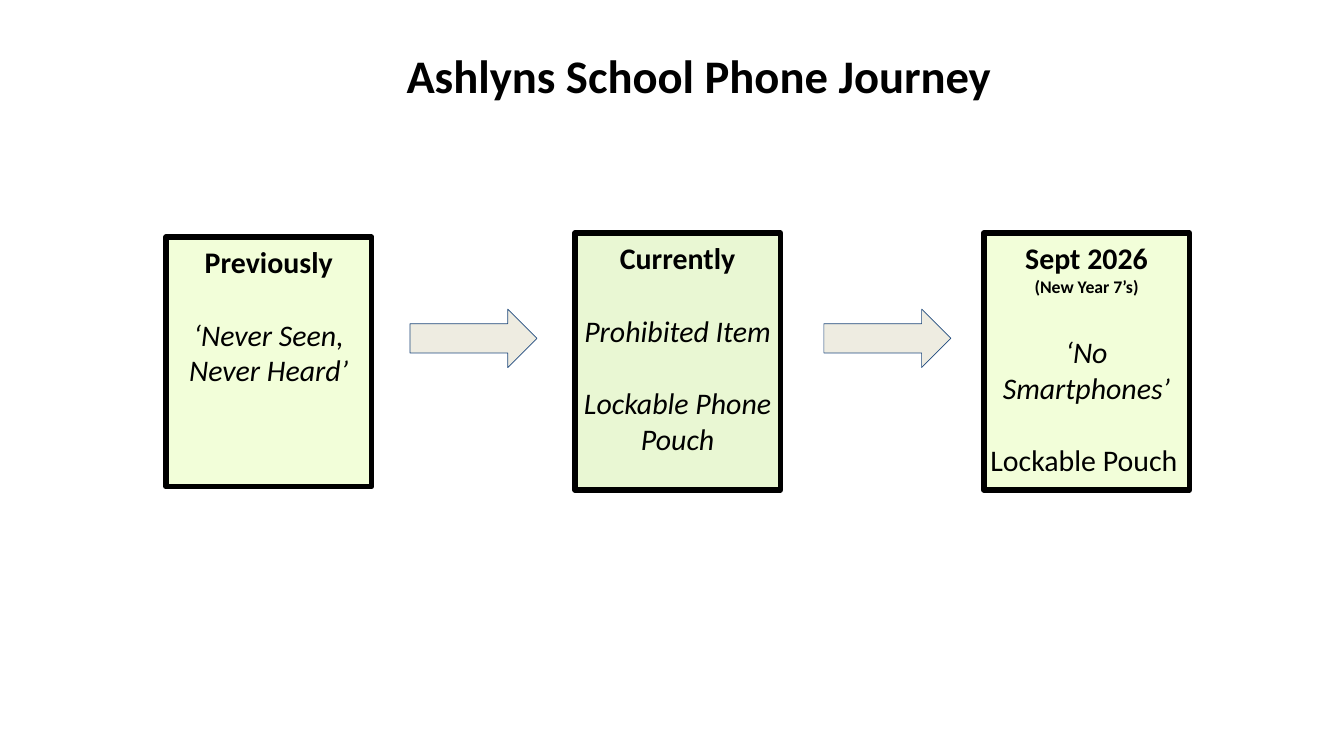
from pptx import Presentation
from pptx.dml.color import RGBColor
from pptx.enum.shapes import MSO_SHAPE
from pptx.enum.text import MSO_ANCHOR, MSO_AUTO_SIZE, PP_ALIGN
from pptx.util import Inches, Pt

BLACK = RGBColor(0x00, 0x00, 0x00)
LIME = RGBColor(0xF2, 0xFE, 0xD9)
GREEN = RGBColor(0xE9, 0xF7, 0xD3)
CREAM = RGBColor(0xEE, 0xEC, 0xE1)
NAVY = RGBColor(0x1F, 0x49, 0x7D)
FONT = "Calibri"
LINE_GAP = 39

STAGE_LEFT, STAGE_STEP, STAGE_WIDTH = 2.47, 6.085, 3.06
ARROW_LEFT, ARROW_STEP = 6.1, 6.16

HEADING = {"bold": True}
PHRASE = {"italic": True, "before": LINE_GAP}
STAGES = [
    (3.53, 3.71, LIME, [("Previously", HEADING),
                        ("‘Never Seen, Never Heard’", PHRASE)]),
    (3.47, 3.82, GREEN, [("Currently", HEADING),
                         ("Prohibited Item", PHRASE),
                         ("Lockable Phone Pouch", PHRASE)]),
    (3.47, 3.82, LIME, [("Sept 2026", HEADING),
                        ("(New Year 7’s)", {"bold": True, "size": 19}),
                        ("‘No Smartphones’", PHRASE),
                        ("Lockable Pouch", {"before": LINE_GAP, "align": PP_ALIGN.LEFT})]),
]


def write(p, text, size=32, bold=False, italic=False, before=0, align=PP_ALIGN.CENTER):
    p.alignment = align
    p.space_before = Pt(before)
    r = p.add_run()
    r.text = text
    r.font.name = FONT
    r.font.size = Pt(size)
    r.font.bold = bold
    r.font.italic = italic
    r.font.color.rgb = BLACK


def set_frame(tf):
    tf.word_wrap = True
    tf.auto_size = MSO_AUTO_SIZE.NONE
    tf.vertical_anchor = MSO_ANCHOR.TOP
    tf.margin_left = tf.margin_right = Inches(0.1)
    tf.margin_top = tf.margin_bottom = Inches(0.1)


def add_block(s, kind, left, top, width, height, fill, line, weight):
    sp = s.shapes.add_shape(kind, Inches(left), Inches(top), Inches(width), Inches(height))
    sp.shadow.inherit = False
    sp.fill.solid()
    sp.fill.fore_color.rgb = fill
    sp.line.color.rgb = line
    sp.line.width = Pt(weight)
    return sp


def add_title(s, left, top, width, height, text):
    sp = s.shapes.title
    sp.left, sp.top = Inches(left), Inches(top)
    sp.width, sp.height = Inches(width), Inches(height)
    set_frame(sp.text_frame)
    write(sp.text_frame.paragraphs[0], text, size=50, bold=True)


def add_stage(s, left, top, width, height, fill, lines):
    sp = add_block(s, MSO_SHAPE.RECTANGLE, left, top, width, height, fill, BLACK, 6)
    tf = sp.text_frame
    set_frame(tf)
    for i, (text, style) in enumerate(lines):
        p = tf.add_paragraph() if i else tf.paragraphs[0]
        write(p, text, **style)


def add_arrow(s, left, top, width, height):
    add_block(s, MSO_SHAPE.RIGHT_ARROW, left, top, width, height, CREAM, NAVY, 0.75)


def main():
    prs = Presentation()
    prs.slide_width, prs.slide_height = Inches(20), Inches(11.25)
    s = prs.slides.add_slide(prs.slide_layouts[5])
    add_title(s, 1.8, 0.59, 17.21, 1.93, "Ashlyns School Phone Journey")
    for i, (top, height, fill, lines) in enumerate(STAGES):
        if i:
            add_arrow(s, ARROW_LEFT + (i - 1) * ARROW_STEP, 4.6, 1.89, 0.87)
        add_stage(s, STAGE_LEFT + i * STAGE_STEP, top, STAGE_WIDTH, height, fill, lines)
    prs.save("out.pptx")


if __name__ == "__main__":
    main()
